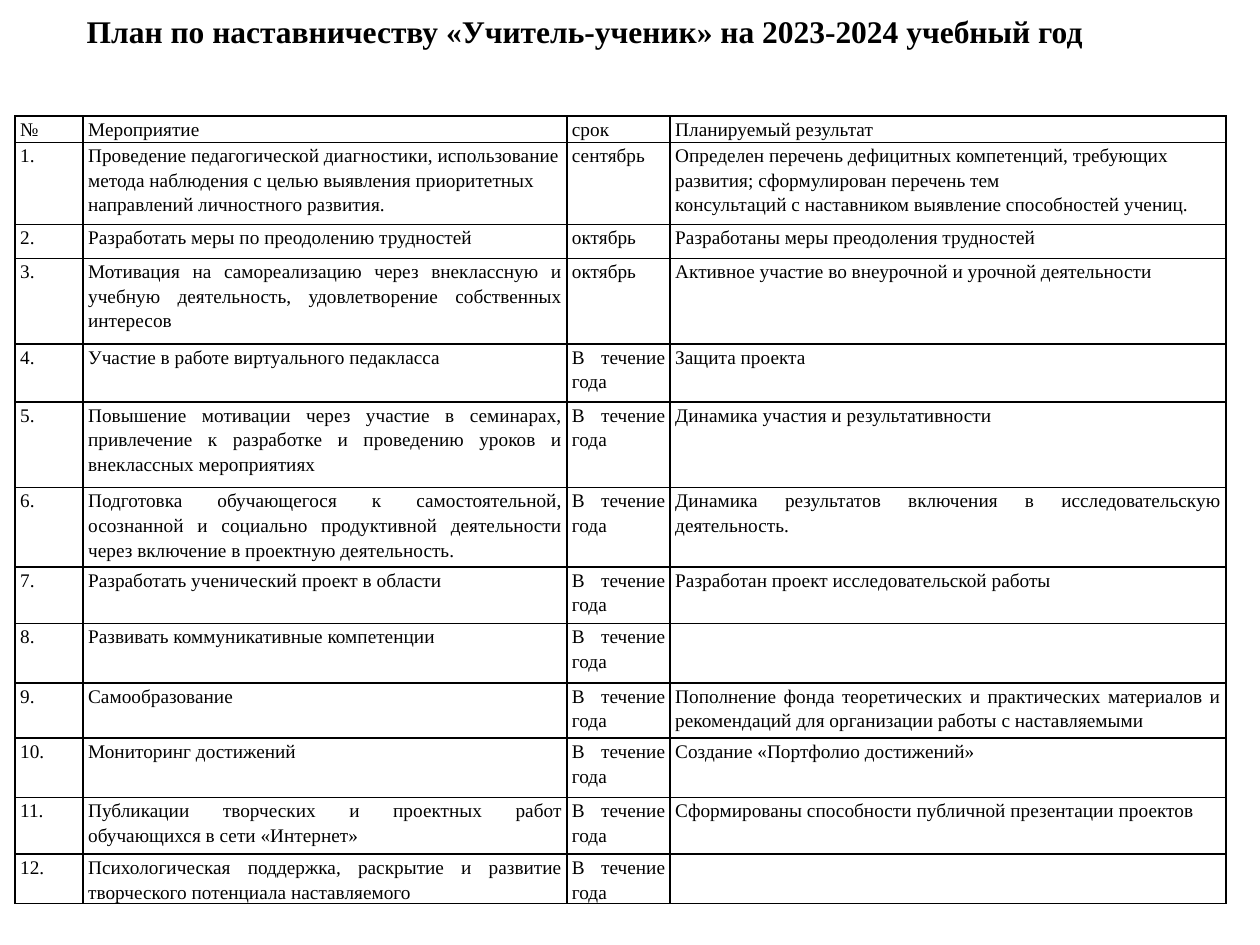
from lxml.etree import SubElement
from pptx import Presentation
from pptx.dml.color import RGBColor
from pptx.enum.text import MSO_ANCHOR, PP_ALIGN as Align
from pptx.oxml.ns import qn
from pptx.util import Inches, Pt

COLORS = {"text": "000000", "border": "000000"}
FONT = "Times New Roman"
TITLE = "План по наставничеству «Учитель-ученик» на 2023-2024 учебный год"
HEADER = ("№", "Мероприятие", "срок", "Планируемый результат")
ALL_YEAR = "В течение года"
PLAN = [  # activity, term, expected result
    ("Проведение педагогической диагностики, использование метода наблюдения с целью "
     "выявления приоритетных направлений личностного развития.", "сентябрь",
     "Определен перечень дефицитных компетенций, требующих развития; сформулирован "
     "перечень тем\nконсультаций с наставником выявление способностей учениц."),
    ("Разработать меры по преодолению трудностей", "октябрь",
     "Разработаны меры преодоления трудностей"),
    ("Мотивация на самореализацию через внеклассную и учебную деятельность, "
     "удовлетворение собственных интересов", "октябрь",
     "Активное участие во внеурочной и урочной деятельности"),
    ("Участие в работе виртуального педакласса", ALL_YEAR, "Защита проекта"),
    ("Повышение мотивации через участие в семинарах, привлечение к разработке и "
     "проведению уроков и внеклассных мероприятиях", ALL_YEAR,
     "Динамика участия и результативности"),
    ("Подготовка обучающегося к самостоятельной, осознанной и социально продуктивной "
     "деятельности через включение в проектную деятельность.", ALL_YEAR,
     "Динамика результатов включения в исследовательскую деятельность."),
    ("Разработать ученический проект в области", ALL_YEAR,
     "Разработан проект исследовательской работы"),
    ("Развивать коммуникативные компетенции", ALL_YEAR, ""),
    ("Самообразование", ALL_YEAR,
     "Пополнение фонда теоретических и практических материалов и рекомендаций для "
     "организации работы с наставляемыми"),
    ("Мониторинг достижений", ALL_YEAR, "Создание «Портфолио достижений»"),
    ("Публикации творческих и проектных работ обучающихся в сети «Интернет»", ALL_YEAR,
     "Сформированы способности публичной презентации проектов"),
    ("Психологическая поддержка, раскрытие и развитие творческого потенциала "
     "наставляемого", ALL_YEAR, ""),
]
ROWS = [HEADER] + [(f"{number}.", *entry) for number, entry in enumerate(PLAN, 1)]
COL_WIDTHS = (0.54, 3.84, 0.82, 4.41)
ROW_HEIGHTS = (0.21, 0.65, 0.27, 0.68, 0.46, 0.68, 0.63, 0.45, 0.47, 0.44, 0.47, 0.45, 0.39)
LEFT_ALIGNED_ROW = 1
CELL_FORMAT = {
    "margin_left": Inches(0.04), "margin_right": Inches(0.04),
    "margin_top": 0, "margin_bottom": 0, "vertical_anchor": MSO_ANCHOR.TOP,
}
TITLE_FONT = {"name": FONT, "size": Pt(18), "bold": True}
CELL_FONT = {"name": FONT, "size": Pt(11), "bold": False}


def apply(target, values):
    for name, value in values.items():
        setattr(target, name, value)


def write(para, text, font):
    span = para.add_run()
    span.text = text
    apply(span.font, font)
    span.font.color.rgb = RGBColor.from_string(COLORS["text"])


def add_borders(cell):
    """Draw all four sides; the lines must come before the cell's fill."""
    props = cell._tc.get_or_add_tcPr()
    for side in ("a:lnL", "a:lnR", "a:lnT", "a:lnB"):
        line = SubElement(props, qn(side), w=str(Pt(1)))
        fill = SubElement(line, qn("a:solidFill"))
        SubElement(fill, qn("a:srgbClr"), val=COLORS["border"])


def fill_cell(cell, text, align):
    apply(cell, CELL_FORMAT)
    add_borders(cell)
    cell.fill.background()
    frame = cell.text_frame
    for index, line in enumerate(text.split("\n")):
        para = frame.add_paragraph() if index else frame.paragraphs[0]
        para.alignment = align
        para.line_spacing = 1.15
        if line:
            write(para, line, CELL_FONT)


def add_plan(page):
    table = page.shapes.add_table(
        len(ROWS), len(HEADER), Inches(0.12), Inches(0.92),
        Inches(sum(COL_WIDTHS)), Inches(sum(ROW_HEIGHTS))).table
    apply(table, {"first_row": False, "horz_banding": False})
    for column, width in zip(table.columns, COL_WIDTHS):
        column.width = Inches(width)
    for row, height in zip(table.rows, ROW_HEIGHTS):
        row.height = Inches(height)
    for r, texts in enumerate(ROWS):
        for c, text in enumerate(texts):
            left = r == LEFT_ALIGNED_ROW and c > 0
            fill_cell(table.cell(r, c), text, Align.LEFT if left else Align.JUSTIFY)


def add_title(page):
    box = page.shapes.add_textbox(Inches(0.59), Inches(0.05), Inches(9.13), Inches(0.4))
    box.text_frame.word_wrap = True
    write(box.text_frame.paragraphs[0], TITLE, TITLE_FONT)


def main():
    deck = Presentation()
    apply(deck, {"slide_width": Inches(10), "slide_height": Inches(7.5)})
    page = deck.slides.add_slide(deck.slide_layouts[6])
    add_plan(page)
    add_title(page)
    deck.save("out.pptx")


if __name__ == "__main__":
    main()
